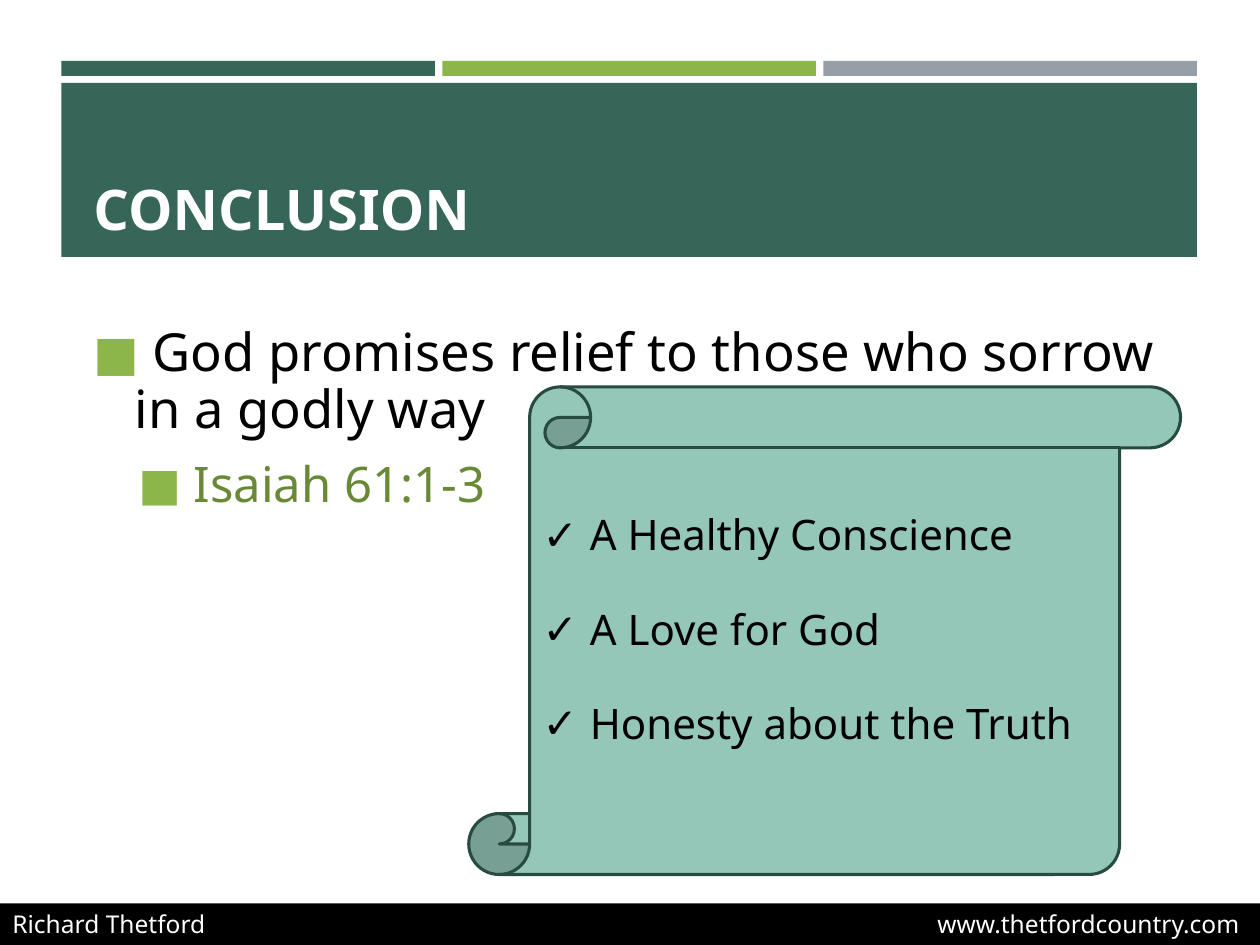
import pptx
import pptx.util
import pptx.dml.color
import pptx.enum.shapes
import pptx.enum.text
from lxml import etree

Cm, Pt = pptx.util.Cm, pptx.util.Pt
SHAPE = pptx.enum.shapes.MSO_SHAPE
ANCHOR = pptx.enum.text.MSO_ANCHOR
ALIGN = pptx.enum.text.PP_ALIGN
GREEN, LIME, GREY = "366658", "8CB64A", "969FA7"
A = "{http://schemas.openxmlformats.org/drawingml/2006/main}"


def paint(part, color):
    """Give a fill or a font a solid colour."""
    if hasattr(part, "solid"):
        part.solid()
        part.fore_color.rgb = pptx.dml.color.RGBColor.from_string(color)
    else:
        part.color.rgb = pptx.dml.color.RGBColor.from_string(color)


def style(paragraph, size, color, bullet=None, bullet_color=None, left=0, hanging=0):
    """Set the font of a paragraph and, if asked, its bullet and hanging indent."""
    paragraph.alignment = ALIGN.LEFT
    if bullet:
        props = paragraph._p.get_or_add_pPr()
        props.set("marL", str(Cm(left)))
        props.set("indent", str(-Cm(hanging)))
        if bullet_color:
            bullet_fill = etree.SubElement(props, A + "buClr")
            etree.SubElement(bullet_fill, A + "srgbClr", val=bullet_color)
            etree.SubElement(props, A + "buSzPct", val="92000")
        etree.SubElement(props, A + "buFont", typeface="Noto Sans")
        etree.SubElement(props, A + "buChar", char=bullet)
    paragraph.font.name = "Noto Sans"
    paragraph.font.size = Pt(size)
    paint(paragraph.font, color)


prs = pptx.Presentation()
prs.slide_width, prs.slide_height = Cm(25.4), Cm(19.05)
slide = prs.slides.add_slide(prs.slide_layouts[5])
shapes = slide.shapes

# Three accent bars, the title band and the footer strip
blocks = [(1.24 + 7.68 * i, 1.23, 7.53, 0.3, color)
          for i, color in enumerate((GREEN, LIME, GREY))]
blocks += [(1.24, 1.67, 22.89, 3.51, GREEN), (0, 18.21, 25.4, 0.84, "000000")]
for left, top, width, height, color in blocks:
    block = shapes.add_shape(SHAPE.RECTANGLE, Cm(left), Cm(top), Cm(width), Cm(height))
    block.shadow.inherit = False
    paint(block.fill, color)
    block.line.fill.background()

# Footer text: name at the left, address at a right tab stop
footer = block.text_frame
footer.vertical_anchor = ANCHOR.MIDDLE
footer.margin_top = footer.margin_bottom = 0
footer.text = "Richard Thetford\twww.thetfordcountry.com"
tabs = etree.SubElement(footer.paragraphs[0]._p.get_or_add_pPr(), A + "tabLst")
etree.SubElement(tabs, A + "tab", pos=str(Cm(24.74)), algn="r")
style(footer.paragraphs[0], 14, "FFFFFF")

# Title, brought in front of its band
title = shapes.title
title.element.getparent().append(title.element)
title.left, title.top, title.width, title.height = Cm(1.63), Cm(1.91), Cm(22.2), Cm(3.1)
title.text_frame.text = "CONCLUSION"
title.text_frame.vertical_anchor = ANCHOR.BOTTOM
style(title.text_frame.paragraphs[0], 32, "FFFFFF")
title.text_frame.paragraphs[0].font.bold = True

# Promise and its scripture reference
promise = shapes.add_textbox(Cm(1.63), Cm(5.46), Cm(22.2), Cm(12.34)).text_frame
promise.word_wrap = True
promise.margin_top = Cm(1.12)
promise.text = " God promises relief to those who sorrow in a godly way\n Isaiah 61:1-3"
for paragraph, size, color, left in zip(
        promise.paragraphs, (30, 28), ("000000", "698937"), (0.84, 1.75)):
    paragraph.line_spacing = 0.9
    paragraph.space_after = Pt(11.5)
    style(paragraph, size, color, "■", LIME, left, 0.84)

# Scroll
scroll = shapes.add_shape(SHAPE.VERTICAL_SCROLL, Cm(9.45), Cm(7.8), Cm(14.35), Cm(9.83))
scroll.shadow.inherit = False
paint(scroll.fill, "95C7B9")
paint(scroll.line.fill, "284B41")
scroll.line.width = Pt(1.75)

# Checklist on the scroll
checklist = shapes.add_textbox(Cm(10.69), Cm(10.21), Cm(11.89), Cm(5.38)).text_frame
checklist.word_wrap = True
checklist.margin_top = Cm(0.05)
checklist.text = "A Healthy Conscience\nA Love for God\nHonesty about the Truth"
for paragraph in checklist.paragraphs:
    paragraph.space_after = Pt(25)
    style(paragraph, 24, "000000", "✓", left=0.95, hanging=0.95)

prs.save("out.pptx")
